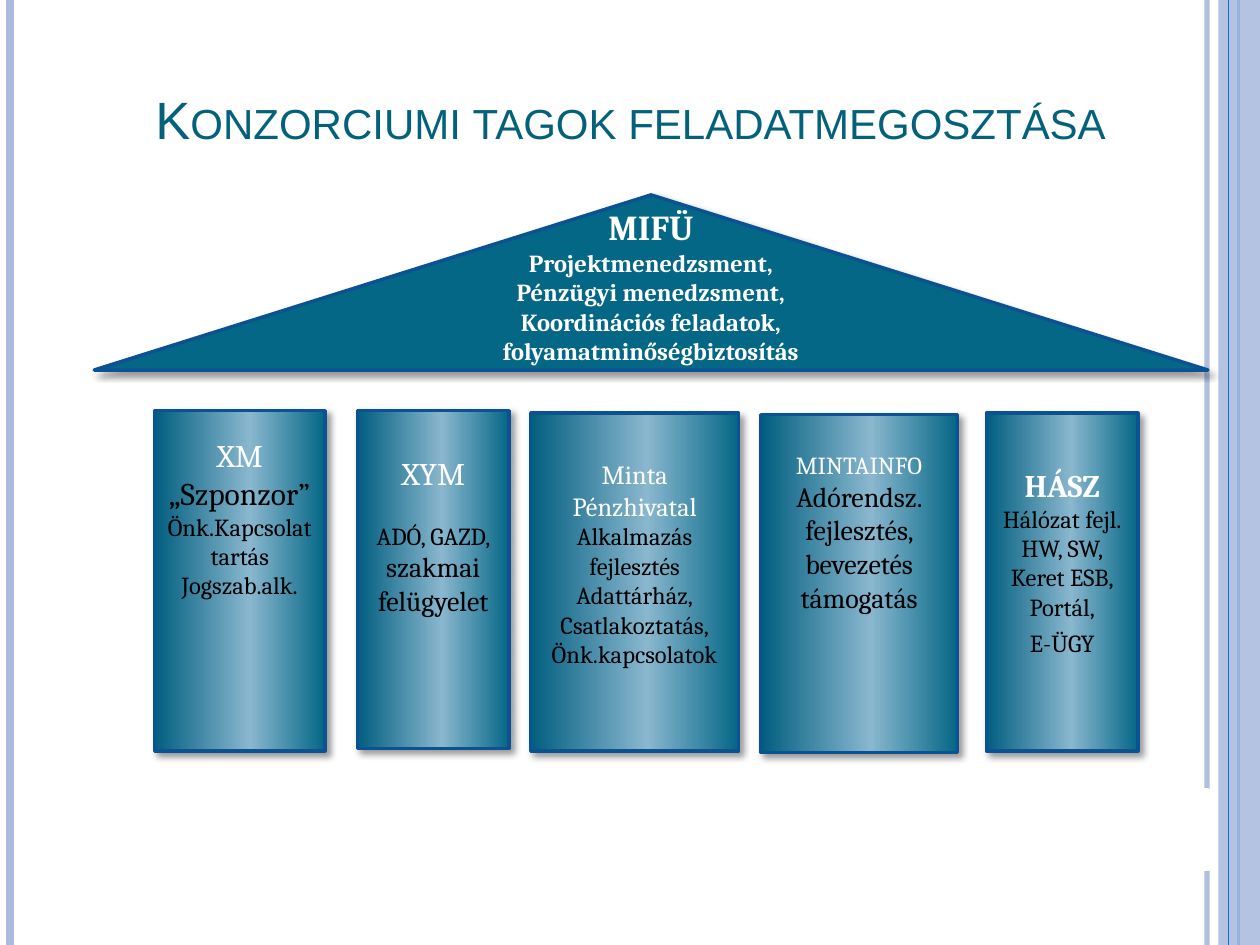
from lxml.etree import SubElement
from pptx import Presentation
from pptx.dml.color import RGBColor
from pptx.enum.shapes import MSO_CONNECTOR, MSO_SHAPE
from pptx.enum.text import MSO_ANCHOR as Anchor, PP_ALIGN as Align
from pptx.oxml.ns import qn
from pptx.util import Cm, Pt

TEAL, OUTLINE, LILAC, BLUE = "056786", "0B5292", "ABBBDF", "0F6FC6"
WHITE, BLACK = "FFFFFF", "000000"
GRADIENT = [(1, "046081"), (56, "89B7CE"), (100, TEAL)]
WIDTH, HEIGHT = 25.4, 19.05

TITLE = "Konzorciumi tagok feladatmegosztása"

# Each paragraph is a list of runs (text, format) and its spacing
ROOF = [
    ([("MIFÜ", dict(size=20, bold=True))], {}),
    ([("Projektmenedzsment,", dict(size=14, bold=True))], {}),
    ([("Pénzügyi menedzsment,", dict(size=14, bold=True))], {}),
    ([("Koordinációs feladatok, folyamatminőségbiztosítás",
       dict(size=14, bold=True))], {}),
]
DARK = dict(size=14, color=BLACK)

# left, top, width, height, space above the text, paragraphs
PILLARS = [
    (3.12, 8.28, 3.43, 6.86, 0.51, [
        ([("XM", dict(size=18))], {}),
        ([("„Szponzor”", dict(size=18, color=BLACK))], {}),
        ([("Önk.Kapcsolattartás", DARK)], {}),
        ([("Jogszab.alk.", DARK)], {}),
    ]),
    (7.21, 8.28, 3.05, 6.81, 0.87, [
        ([("XYM", dict(size=18))], dict(after=16.5)),
        ([("ADÓ, GAZD, ", DARK),
          ("szakmai felügyelet", dict(size=16, color=BLACK))], {}),
    ]),
    (10.7, 8.33, 4.19, 6.81, 0.91, [
        ([("Minta Pénzhivatal", dict(size=15))], {}),
        ([("Alkalmazás fejlesztés", DARK)], {}),
        ([("Adattárház,", DARK)], {}),
        ([("Csatlakoztatás,", DARK)], {}),
        ([("Önk.kapcsolatok", DARK)], {}),
    ]),
    (15.34, 8.36, 3.96, 6.81, 0.71, [
        ([("MINTAINFO", dict(size=14))], {}),
        ([("Adórendsz. fejlesztés, bevezetés támogatás",
           dict(size=16, color=BLACK))], {}),
    ]),
    (19.89, 8.33, 3.05, 6.81, 1.06, [
        ([("HÁSZ", dict(size=18, bold=True))], {}),
        ([("Hálózat fejl.", DARK)], {}),
        ([("HW, SW,", DARK)], {}),
        ([("Keret ESB,", DARK)], {}),
        ([("Portál,", DARK)], {}),
        ([("E-ÜGY", DARK)], dict(before=4)),
    ]),
]

presentation = Presentation()
presentation.slide_width, presentation.slide_height = Cm(WIDTH), Cm(HEIGHT)
slide = presentation.slides.add_slide(presentation.slide_layouts[6])


def rgb(color):
    return RGBColor.from_string(color)


def set_alpha(properties, percent):
    for color in properties.iter(qn("a:srgbClr")):
        SubElement(color, qn("a:alpha"), val=str(percent * 1000))


def add_rule(x, color, weight, alpha=100):
    """Draw a vertical line over the full slide height."""
    line = slide.shapes.add_connector(
        MSO_CONNECTOR.STRAIGHT, Cm(x), 0, Cm(x), Cm(HEIGHT))
    line.line.color.rgb = rgb(color)
    line.line.width = Pt(weight)
    properties = line._element.spPr
    SubElement(properties, qn("a:effectLst"))
    if alpha < 100:
        set_alpha(properties, alpha)


def add_box(kind, left, top, width, height, fill, outline=None):
    """Add a shape; fill is one colour or a list of gradient stops."""
    shape = slide.shapes.add_shape(kind, Cm(left), Cm(top), Cm(width), Cm(height))
    shape.shadow.inherit = False
    if isinstance(fill, str):
        shape.fill.solid()
        shape.fill.fore_color.rgb = rgb(fill)
    else:
        shape.fill.gradient()
        shape.fill.gradient_angle = 0
        stops = shape._element.spPr.find(".//" + qn("a:gsLst"))
        stops.clear()
        for position, color in fill:
            stop = SubElement(stops, qn("a:gs"), pos=str(position * 1000))
            SubElement(stop, qn("a:srgbClr"), val=color)
    if outline:
        shape.line.color.rgb = rgb(outline)
        shape.line.width = Pt(2)
        SubElement(shape._element.spPr.find(qn("a:ln")), qn("a:round"))
    else:
        shape.line.fill.background()
    return shape


def add_shadow(shape):
    effects = shape._element.spPr.find(qn("a:effectLst"))
    shadow = SubElement(effects, qn("a:outerShdw"), blurRad=str(Pt(4)),
                        dist=str(Pt(3)), dir=str(45 * 60000))
    SubElement(shadow, qn("a:srgbClr"), val=BLACK)
    set_alpha(effects, 40)


def add_run(paragraph, text, size=14, color=WHITE, bold=False,
            font="Cambria", small_caps=False):
    run = paragraph.add_run()
    run.text = text
    run.font.name, run.font.size, run.font.bold = font, Pt(size), bold
    run.font.color.rgb = rgb(color)
    if small_caps:
        run._r.get_or_add_rPr().set("cap", "small")


def write(shape, paragraphs, anchor, top=0.13, bottom=0.13):
    frame = shape.text_frame
    frame.word_wrap = True
    frame.vertical_anchor = anchor
    frame.margin_top, frame.margin_bottom = Cm(top), Cm(bottom)
    for index, (runs, spacing) in enumerate(paragraphs):
        paragraph = frame.add_paragraph() if index else frame.paragraphs[0]
        paragraph.alignment = Align.CENTER
        paragraph.space_before = Pt(spacing.get("before", 0))
        paragraph.space_after = Pt(spacing.get("after", 0))
        for text, style in runs:
            add_run(paragraph, text, **style)


# Side bands
add_rule(24.33, LILAC, 3, alpha=93)
add_rule(0.2, LILAC, 4.5)
add_rule(24.97, BLUE, 1.5)
band = add_box(MSO_SHAPE.RECTANGLE, 24.56, 0, WIDTH - 24.56, HEIGHT, LILAC)
set_alpha(band._element.spPr, 87)
add_rule(24.77, BLUE, 0.75)

title = slide.shapes.add_textbox(Cm(2.34), Cm(-0.03), Cm(20.75), Cm(3.18))
title_style = dict(size=30, color="04617B", font="Arial", small_caps=True)
write(title, [([(TITLE, title_style)], {})], Anchor.BOTTOM)

roof = add_box(MSO_SHAPE.ISOSCELES_TRIANGLE, 1.9, 3.93, 22.45, 3.53, TEAL, OUTLINE)
add_shadow(roof)
write(roof, ROOF, Anchor.BOTTOM, bottom=0.09)

for left, top, width, height, space_above, paragraphs in PILLARS:
    pillar = add_box(MSO_SHAPE.RECTANGLE, left, top, width, height, GRADIENT, OUTLINE)
    add_shadow(pillar)
    write(pillar, paragraphs, Anchor.TOP, top=space_above)

add_box(MSO_SHAPE.RECTANGLE, 22.5, 15.93, 1.85, 1.6, WHITE, WHITE)

presentation.save("out.pptx")
